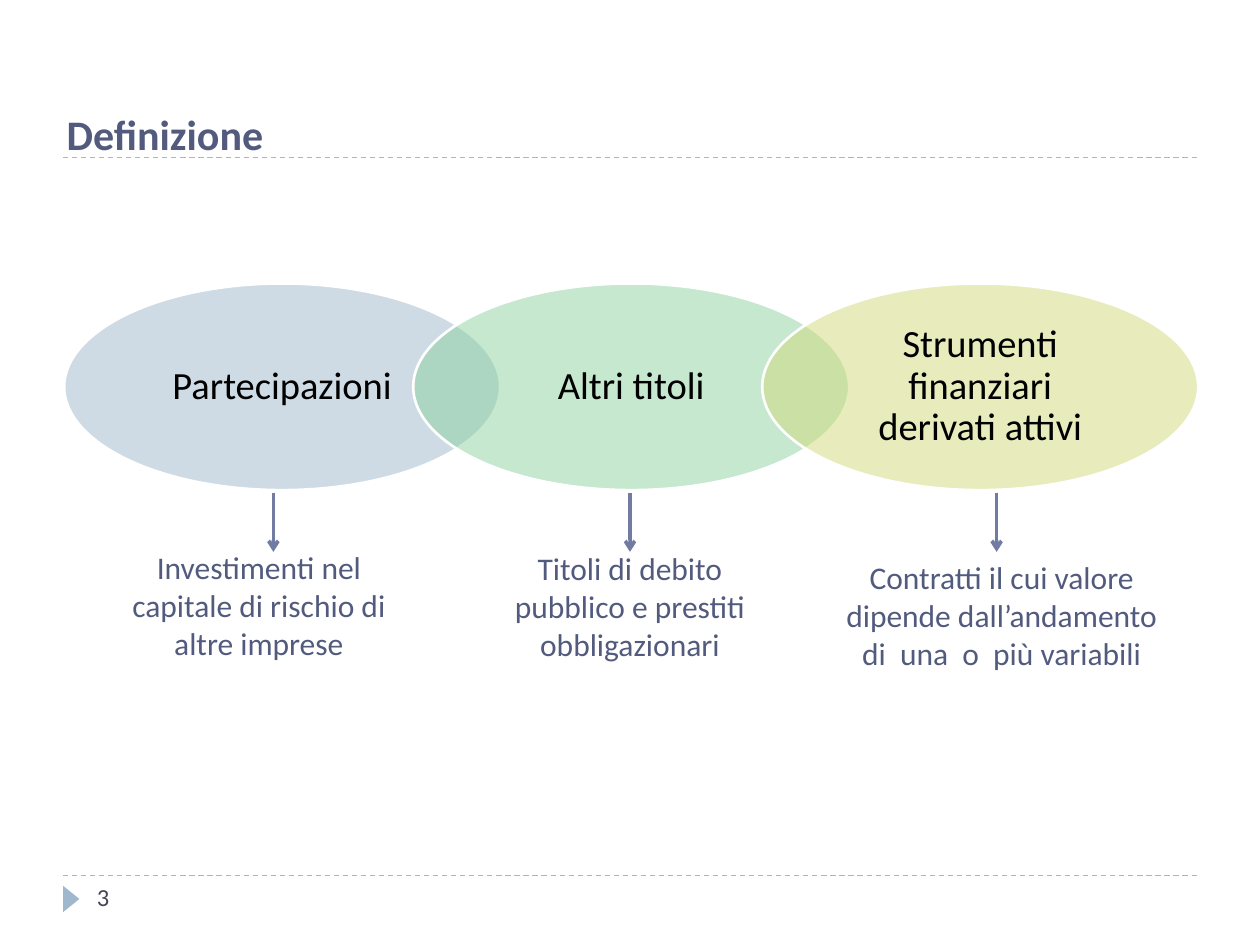
"""Build the slide that defines three kinds of financial assets."""
from lxml.etree import SubElement
from pptx import Presentation
from pptx.dml.color import RGBColor
from pptx.enum.dml import MSO_LINE
from pptx.enum.shapes import MSO_CONNECTOR, MSO_SHAPE
from pptx.enum.text import MSO_ANCHOR, PP_ALIGN
from pptx.oxml.ns import qn
from pptx.util import Inches, Pt

COLORS = {
    "rule": "9FB8CD", "title": "525B7E", "arrow": "727CA3", "page": "464653",
    "black": "000000", "white": "FFFFFF",
    "blue": "9FB8CD", "green": "8DD3A0", "lime": "D2DA7A",
}
TITLE = "Definizione"
PAGE = "3"
ITEMS = [
    {"name": "Partecipazioni", "fill": "blue", "arrow": 2.17,
     "note": "Investimenti nel capitale di rischio di altre imprese",
     "box": (0.91, 4.3, 2.29, 1.01)},
    {"name": "Altri titoli", "fill": "green", "arrow": 5,
     "note": "Titoli di debito pubblico e prestiti obbligazionari",
     "box": (3.98, 4.31, 2.04, 1.01)},
    {"name": "Strumenti finanziari derivati attivi", "fill": "lime", "arrow": 7.91,
     "note": "Contratti il cui valore dipende dall’andamento di  una  o  più variabili",
     "box": (6.57, 4.38, 2.76, 1.01)},
]
LEFT, TOP, WIDTH, HEIGHT, STEP = 0.51, 2.25, 3.46, 1.64, 2.77
RULES = (1.25, 6.95)
ARROW = (3.91, 4.38)


def rgb(key):
    return RGBColor.from_string(COLORS[key])


def write(shape, text, size, color, align=PP_ALIGN.LEFT, bold=False):
    frame = shape.text_frame
    frame.word_wrap = True
    frame.text = text
    para = frame.paragraphs[0]
    para.alignment = align
    font = para.runs[0].font
    font.name, font.size, font.bold = "Calibri", Pt(size), bold
    font.color.rgb = rgb(color)
    return frame


def add_text(slide, box, *args, **style):
    shape = slide.shapes.add_textbox(*map(Inches, box))
    return write(shape, *args, **style)


def add_line(slide, start, end, color, width):
    line = slide.shapes.add_connector(
        MSO_CONNECTOR.STRAIGHT, *map(Inches, start + end))
    line.line.color.rgb = rgb(color)
    line.line.width = Pt(width)
    SubElement(line._element.spPr, qn("a:effectLst"))
    return line


def add_shape(slide, kind, box, fill):
    shape = slide.shapes.add_shape(kind, *map(Inches, box))
    shape.shadow.inherit = False
    shape.fill.solid()
    shape.fill.fore_color.rgb = rgb(fill)
    return shape


def add_oval(slide, left, item):
    oval = add_shape(slide, MSO_SHAPE.OVAL, (left, TOP, WIDTH, HEIGHT), item["fill"])
    tint = oval._element.spPr.find(qn("a:solidFill"))[0]
    SubElement(tint, qn("a:alpha"), val="50000")
    oval.line.color.rgb = rgb("white")
    oval.line.width = Pt(1.5)
    frame = write(oval, item["name"], 22, "black", PP_ALIGN.CENTER)
    frame.vertical_anchor = MSO_ANCHOR.MIDDLE
    frame.margin_left = frame.margin_right = Inches(0.19)
    frame.margin_top = frame.margin_bottom = Inches(0.03)
    frame.paragraphs[0].line_spacing = 0.9


def add_arrow(slide, x):
    top, bottom = ARROW
    line = add_line(slide, (x, top), (x, bottom), "arrow", 2)
    SubElement(line.line._get_or_add_ln(), qn("a:tailEnd"), type="arrow")


def main():
    deck = Presentation()
    deck.slide_width, deck.slide_height = Inches(10), Inches(7.5)
    slide = deck.slides.add_slide(deck.slide_layouts[6])
    for y in RULES:
        rule = add_line(slide, (0.5, y), (9.5, y), "rule", 0.75)
        rule.line.dash_style = MSO_LINE.DASH
    mark = add_shape(slide, MSO_SHAPE.ISOSCELES_TRIANGLE, (0.46, 7.07, 0.21, 0.13), "rule")
    mark.rotation = 90
    mark.line.fill.background()
    add_text(slide, (0.43, 0.81, 8.91, 0.5), TITLE, 24, "title", bold=True)
    for i, item in enumerate(ITEMS):
        add_oval(slide, LEFT + i * STEP, item)
    for item in ITEMS:
        add_text(slide, item["box"], item["note"], 18, "title", align=PP_ALIGN.CENTER)
        add_arrow(slide, item["arrow"])
    add_text(slide, (0.67, 6.95, 2.17, 0.4), PAGE, 14, "page")
    deck.save("out.pptx")


if __name__ == "__main__":
    main()
